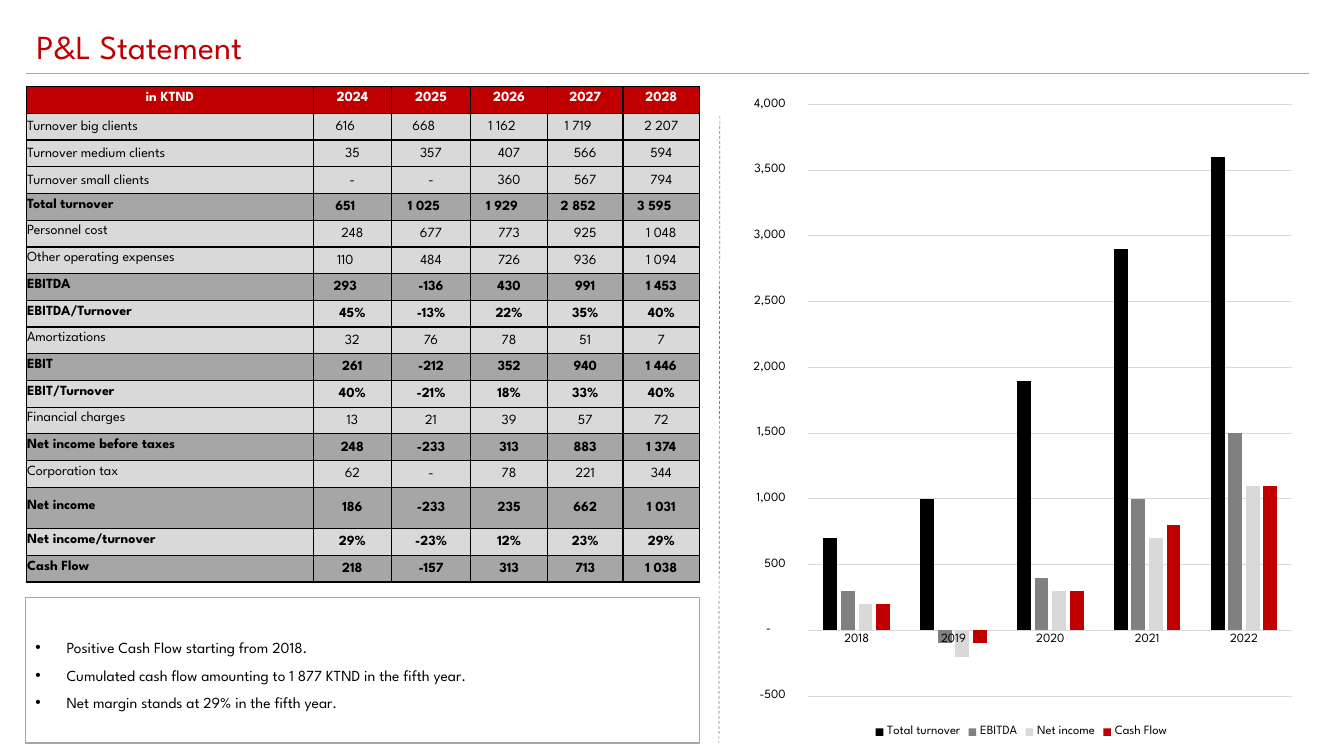
import pptx
import pptx.chart.data
import pptx.dml.color
import pptx.enum.chart
import pptx.enum.dml
import pptx.enum.shapes
import pptx.enum.text
import pptx.oxml
import pptx.oxml.ns
import pptx.util
import lxml.etree

Inches = pptx.util.Inches
Pt = pptx.util.Pt
RGB = pptx.dml.color.RGBColor
ALIGN = pptx.enum.text.PP_ALIGN
ANCHOR = pptx.enum.text.MSO_ANCHOR
FIT = pptx.enum.text.MSO_AUTO_SIZE

RED = RGB(0xC0, 0x00, 0x00)
BLACK = RGB(0x00, 0x00, 0x00)
WHITE = RGB(0xFF, 0xFF, 0xFF)
DARK = RGB(0xA6, 0xA6, 0xA6)
MID = RGB(0x80, 0x80, 0x80)
LIGHT = RGB(0xD9, 0xD9, 0xD9)
FONT = "League Spartan"

HEAD = ["in KTND", "2024", "2025", "2026", "2027", "2028"]
WIDTHS = [2.85, 0.77, 0.79, 0.76, 0.75, 0.76]
# label, is a total, count of leading values set left of centre, values
ROWS = [
    ("Turnover big clients", False, 4, ["616", "668", "1 162", "1 719", "2 207"]),
    ("Turnover medium clients", False, 0, ["35", "357", "407", "566", "594"]),
    ("Turnover small clients", False, 0, ["-", "-", "360", "567", "794"]),
    ("Total turnover", True, 5, ["651", "1 025", "1 929", "2 852", "3 595"]),
    ("Personnel cost", False, 0, ["248", "677", "773", "925", "1 048"]),
    ("Other operating expenses", False, 1, ["110", "484", "726", "936", "1 094"]),
    ("EBITDA", True, 1, ["293", "-136", "430", "991", "1 453"]),
    ("EBITDA/Turnover", False, 0, ["45%", "-13%", "22%", "35%", "40%"]),
    ("Amortizations", False, 0, ["32", "76", "78", "51", "7"]),
    ("EBIT", True, 0, ["261", "-212", "352", "940", "1 446"]),
    ("EBIT/Turnover", False, 0, ["40%", "-21%", "18%", "33%", "40%"]),
    ("Financial charges", False, 0, ["13", "21", "39", "57", "72"]),
    ("Net income before taxes", True, 0, ["248", "-233", "313", "883", "1 374"]),
    ("Corporation tax", False, 0, ["62", "-", "78", "221", "344"]),
    ("Net income", True, 0, ["186", "-233", "235", "662", "1 031"]),
    ("Net income/turnover", False, 0, ["29%", "-23%", "12%", "23%", "29%"]),
    ("Cash Flow", True, 0, ["218", "-157", "313", "713", "1 038"]),
]
TALL = "Net income"
NOTES = [
    "Positive Cash Flow starting from 2018.",
    "Cumulated cash flow amounting to 1 877 KTND in the fifth year.",
    "Net margin stands at 29% in the fifth year.",
]
YEARS = ["2018", "2019", "2020", "2021", "2022"]
SERIES = [
    ("Total turnover", BLACK, [700, 1000, 1900, 2900, 3600]),
    ("EBITDA", MID, [300, -100, 400, 1000, 1500]),
    ("Net income", LIGHT, [200, -200, 300, 700, 1100]),
    ("Cash Flow", RED, [200, -100, 300, 800, 1100]),
]
NUMBERS = r'_-* #,##0\ _D_T_-;\-* #,##0\ _D_T_-;_-* "-"??\ _D_T_-;_-@_-'


def put(item, **values):
    """Set each named attribute of item."""
    for name, value in values.items():
        setattr(item, name, value)


def ink(font, size, color=BLACK, bold=False):
    put(font, name=FONT, size=Pt(size), bold=bold)
    font.color.rgb = color


def place(shape, box):
    left, top, width, height = map(Inches, box)
    put(shape, left=left, top=top, width=width, height=height)


def edge(cell):
    """Draw a thin black line on all four sides of a cell."""
    props = cell._tc.get_or_add_tcPr()
    for at, side in enumerate(("lnL", "lnR", "lnT", "lnB")):
        props.insert(at, pptx.oxml.parse_xml(
            f'<a:{side} {pptx.oxml.ns.nsdecls("a")} w="12700"><a:solidFill>'
            f'<a:srgbClr val="{BLACK}"/></a:solidFill></a:{side}>'))


def fill_cell(cell, text, back, fore=BLACK, bold=False, align=ALIGN.CENTER,
              right=0.01, foot=0):
    put(cell, text=text, vertical_anchor=ANCHOR.MIDDLE,
        margin_left=Inches(0.01), margin_top=Inches(0.01),
        margin_right=Inches(right), margin_bottom=Inches(foot))
    cell.fill.solid()
    cell.fill.fore_color.rgb = back
    par = cell.text_frame.paragraphs[0]
    par.alignment = align
    ink(par.runs[0].font, 10, fore, bold)
    edge(cell)


def add_grid(slide, box):
    left, top, width, height = box
    count = len(ROWS) + 1
    table = slide.shapes.add_table(count, len(HEAD), *map(Inches, box)).table
    put(table, first_row=False, horz_banding=False)
    for col, size in zip(table.columns, WIDTHS):
        col.width = Inches(size)
    tall = 0.41
    low = (height - tall) / (count - 1)
    table.rows[0].height = Inches(low)
    for col, text in enumerate(HEAD):
        fill_cell(table.cell(0, col), text, RED, WHITE, True, foot=0.05)
    for row, (label, total, shifts, values) in enumerate(ROWS, 1):
        table.rows[row].height = Inches(tall if label == TALL else low)
        back = DARK if total else LIGHT
        bold = total or "/" in label
        fill_cell(table.cell(row, 0), label, back, bold=bold, align=ALIGN.LEFT,
                  foot=0 if row < 4 else 0.05)
        for col, text in enumerate(values, 1):
            fill_cell(table.cell(row, col), text, back, bold=bold,
                      right=0.15 if col <= shifts else 0.01)


def add_title(slide, box):
    title = slide.shapes.title
    place(title, box)
    put(title.text_frame, text="P&L Statement", word_wrap=True,
        auto_size=FIT.NONE, vertical_anchor=ANCHOR.TOP)
    par = title.text_frame.paragraphs[0]
    put(par, alignment=ALIGN.LEFT, line_spacing=0.8)
    ink(par.runs[0].font, 24, RED)


def add_notes(slide, box):
    """Put the bullet list in the framed body placeholder."""
    body = slide.placeholders[1]
    place(body, box)
    body.line.color.rgb = DARK
    body.line.width = Pt(1)
    frame = body.text_frame
    put(frame, text="\n".join(NOTES), word_wrap=True, auto_size=FIT.NONE,
        vertical_anchor=ANCHOR.MIDDLE)
    for par in frame.paragraphs:
        put(par, alignment=ALIGN.JUSTIFY, line_spacing=1.5,
            space_before=Pt(0))
        ink(par.runs[0].font, 11)
        props = par._p.get_or_add_pPr()
        props.set("marL", str(Inches(0.31)))
        props.set("indent", str(-Inches(0.31)))
        mark = lxml.etree.SubElement(props, pptx.oxml.ns.qn("a:buChar"))
        mark.set("char", "•")


def add_rule(slide, ends, color, dash=None):
    rule = slide.shapes.add_connector(
        pptx.enum.shapes.MSO_CONNECTOR.STRAIGHT, *map(Inches, ends))
    rule.line.color.rgb = color
    put(rule.line, width=Pt(0.5), dash_style=dash)
    lxml.etree.SubElement(rule._element.spPr, pptx.oxml.ns.qn("a:effectLst"))


def add_bars(slide, box):
    data = pptx.chart.data.CategoryChartData()
    data.categories = YEARS
    for name, color, values in SERIES:
        data.add_series(name, values)
    kinds = pptx.enum.chart
    chart = slide.shapes.add_chart(
        kinds.XL_CHART_TYPE.COLUMN_CLUSTERED, *map(Inches, box), data).chart
    put(chart, has_title=False, has_legend=True)
    ink(chart.font, 10)
    put(chart.legend, position=kinds.XL_LEGEND_POSITION.BOTTOM,
        include_in_layout=False)
    ink(chart.legend.font, 9)
    plot = chart.plots[0]
    put(plot, gap_width=219, overlap=-27, vary_by_categories=False)
    for bars, (name, color, values) in zip(plot.series, SERIES):
        bars.invert_if_negative = False
        bars.format.fill.solid()
        bars.format.fill.fore_color.rgb = color
    base, scale = chart.category_axis, chart.value_axis
    for axis in (base, scale):
        put(axis, major_tick_mark=kinds.XL_TICK_MARK.NONE,
            minor_tick_mark=kinds.XL_TICK_MARK.NONE)
        ink(axis.tick_labels.font, 9)
    put(scale, minimum_scale=-500, maximum_scale=4000, major_unit=500,
        has_major_gridlines=True)
    put(scale.tick_labels, number_format=NUMBERS,
        number_format_is_linked=False)
    scale.format.line.fill.background()
    for line in (base.format.line, scale.major_gridlines.format.line):
        line.color.rgb = LIGHT
        line.width = Pt(0.75)


def main():
    deck = pptx.Presentation()
    put(deck, slide_width=Inches(13.33), slide_height=Inches(7.5))
    slide = deck.slides.add_slide(deck.slide_layouts[1])
    add_grid(slide, (0.26, 0.86, 6.68, 4.92))
    add_title(slide, (0.26, 0.28, 11.5, 0.44))
    add_rule(slide, (0.26, 0.73, 12.98, 0.73), DARK)
    add_notes(slide, (0.25, 5.93, 6.69, 1.44))
    add_rule(slide, (7.14, 1.15, 7.13, 7.37), MID,
             pptx.enum.dml.MSO_LINE.DASH)
    add_bars(slide, (7.33, 0.85, 5.6, 6.51))
    deck.save("out.pptx")


if __name__ == "__main__":
    main()
